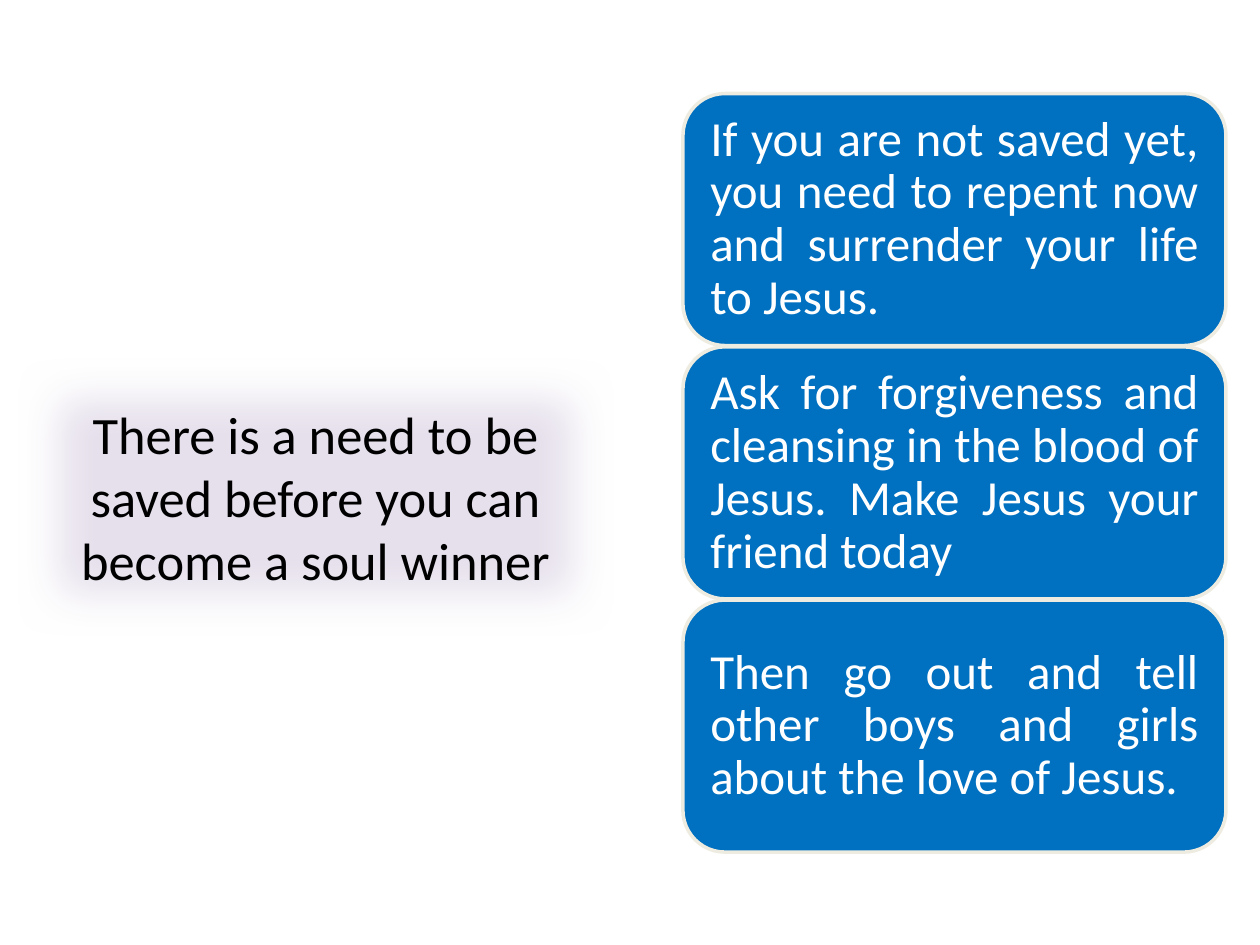
from dataclasses import dataclass

from lxml import etree
from pptx import Presentation
from pptx.dml.color import RGBColor
from pptx.enum.shapes import MSO_SHAPE
from pptx.enum.text import MSO_ANCHOR, MSO_AUTO_SIZE, PP_ALIGN
from pptx.oxml.ns import qn
from pptx.util import Pt

ROUND = MSO_SHAPE.ROUNDED_RECTANGLE
MIDDLE = MSO_ANCHOR.MIDDLE
NO_FIT = MSO_AUTO_SIZE.NONE
CENTER, JUSTIFY = PP_ALIGN.CENTER, PP_ALIGN.JUSTIFY
TITLE_ONLY = 5


@dataclass(frozen=True)
class Theme:
    font: str = "Calibri"
    head: int = 30
    body: int = 28
    ink: RGBColor = RGBColor(0, 0, 0)
    white: RGBColor = RGBColor(255, 255, 255)
    lilac: RGBColor = RGBColor(0xE6, 0xE0, 0xEC)
    blue: RGBColor = RGBColor(0x00, 0x70, 0xC0)
    cream: RGBColor = RGBColor(0xEE, 0xEC, 0xE1)


THEME = Theme()
TITLE = "There is a need to be saved before you can become a soul winner"
STEPS = [
    "If you are not saved yet, you need to repent now and surrender your life to Jesus.",
    "Ask for forgiveness and cleansing in the blood of Jesus. Make Jesus your friend today",
    "Then go out and tell other boys and girls about the love of Jesus.",
]


def apply(item, values):
    for name, value in values.items():
        setattr(item, name, value)


def place(shape, box):
    names = ("left", "top", "width", "height")
    apply(shape, {name: Pt(size) for name, size in zip(names, box)})


def paint(shape, color):
    shape.fill.solid()
    shape.fill.fore_color.rgb = color


def write(shape, text, size, color, frame, para):
    apply(shape.text_frame, {"word_wrap": True, "auto_size": NO_FIT,
                             "vertical_anchor": MIDDLE, **frame})
    line = shape.text_frame.paragraphs[0]
    apply(line, para)
    run = line.add_run()
    run.text = text
    apply(run.font, {"name": THEME.font, "size": Pt(size)})
    run.font.color.rgb = color


def soften(shape, radius):
    """Fade the outer rim of a shape."""
    effects = etree.SubElement(shape._element.spPr, qn("a:effectLst"))
    etree.SubElement(effects, qn("a:softEdge"), rad=str(Pt(radius)))


def add_title(slide, box):
    title = slide.shapes.title
    place(title, box)
    paint(title, THEME.lilac)
    soften(title, 25)
    write(title, TITLE, THEME.head, THEME.ink, {}, {"alignment": CENTER})


def add_steps(slide, box, gap=0.72):
    """Stack equal cards down the box."""
    left, top, width, height = box
    tall = (height - gap * (len(STEPS) - 1)) / len(STEPS)
    sides = ("left", "top", "right", "bottom")
    frame = {f"margin_{side}": Pt(8.64) for side in sides}
    para = {"alignment": JUSTIFY, "line_spacing": 0.9}
    for row, text in enumerate(STEPS):
        spot = [Pt(n) for n in (left, top + row * (tall + gap), width, tall)]
        card = slide.shapes.add_shape(ROUND, *spot)
        card.shadow.inherit = False
        paint(card, THEME.blue)
        card.line.color.rgb = THEME.cream
        card.line.width = Pt(2)
        write(card, text, THEME.body, THEME.white, frame, para)


def main():
    deck = Presentation()
    apply(deck, {"slide_width": Pt(720), "slide_height": Pt(540)})
    slide = deck.slides.add_slide(deck.slide_layouts[TITLE_ONLY])
    # Main message on the left
    add_title(slide, (9.36, 203.76, 342, 159.84))
    # Steps on the right
    add_steps(slide, (390.24, 53.5, 310.32, 433.44))
    deck.save("out.pptx")


if __name__ == "__main__":
    main()
